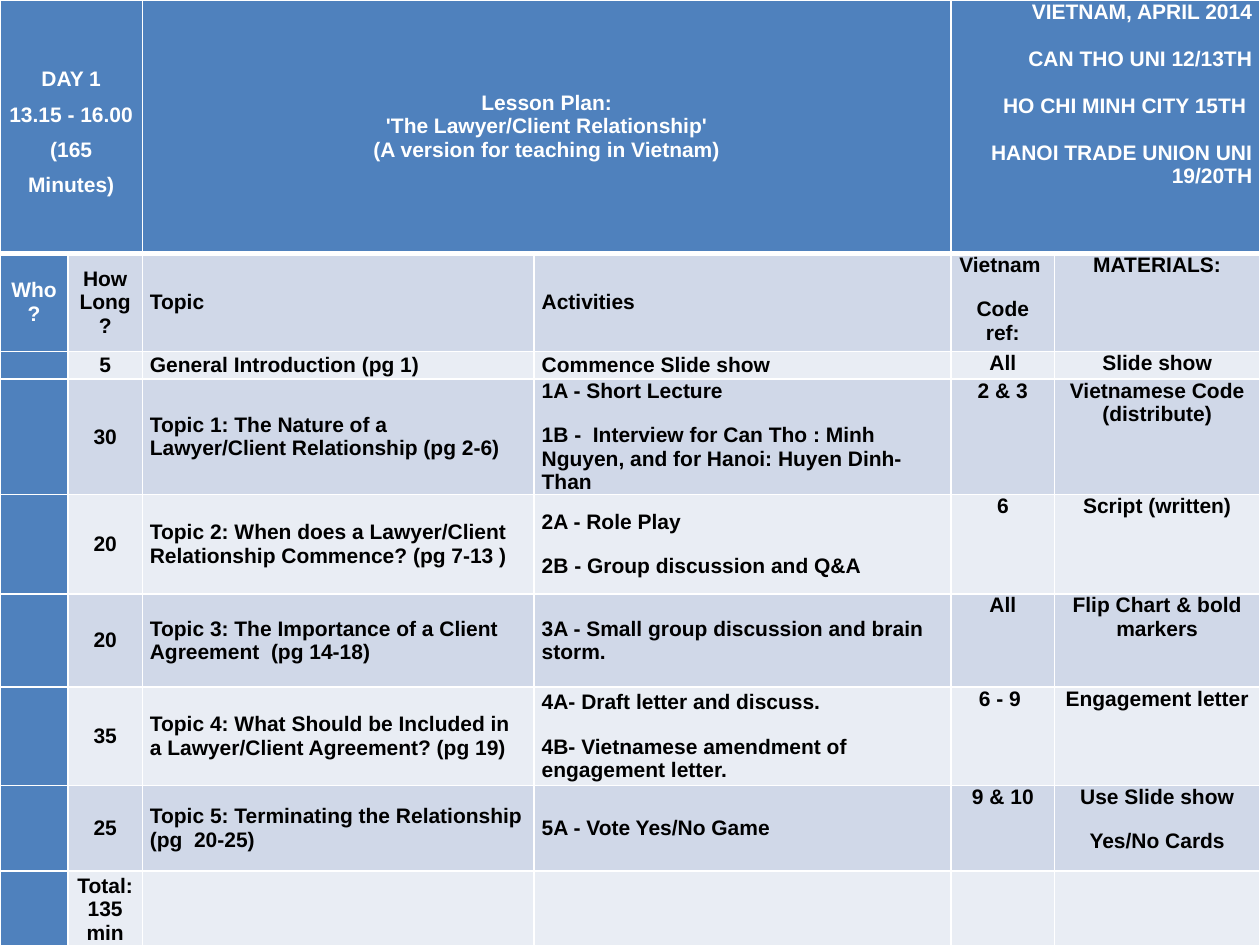
import pptx
import pptx.util
import pptx.dml.color
import pptx.enum.text
import lxml.etree

Inches = pptx.util.Inches
Pt = pptx.util.Pt
ALIGN = pptx.enum.text.PP_ALIGN
ANCHOR = pptx.enum.text.MSO_ANCHOR
COLORS = {"blue": "4F81BD", "dark_band": "D0D8E8", "light_band": "E9EDF4",
          "white": "FFFFFF", "black": "000000"}
NS = "http://schemas.openxmlformats.org/drawingml/2006/main"

column_widths = [0.54, 0.59, 3.11, 3.31, 0.82, 1.63]
row_heights = [2.01, 0.78, 0.22, 0.88, 0.79, 0.74, 0.78, 0.68, 0.61]

# One list of paragraphs per cell; the header cells each span two columns.
lesson_rows = [
    [["DAY 1", "13.15 - 16.00", "(165 Minutes)"], [],
     ["Lesson Plan:", "'The Lawyer/Client Relationship'",
      "(A version for teaching in Vietnam)"], [],
     ["VIETNAM, APRIL 2014", "CAN THO UNI 12/13TH", "HO CHI MINH CITY 15TH ",
      "HANOI TRADE UNION UNI 19/20TH"], []],
    [["Who?"], ["How Long?"], ["Topic"], ["Activities"],
     ["Vietnam ", "Code ref:"], ["MATERIALS:"]],
    [[], ["5"], ["General Introduction (pg 1)"], ["Commence Slide show"],
     ["All"], ["Slide show"]],
    [[], ["30"], ["Topic 1: The Nature of a Lawyer/Client Relationship (pg 2-6)"],
     ["1A - Short Lecture",
      "1B -  Interview for Can Tho : Minh Nguyen, and for Hanoi: Huyen Dinh-Than"],
     ["2 & 3"], ["Vietnamese Code (distribute)"]],
    [[], ["20"],
     ["Topic 2: When does a Lawyer/Client Relationship Commence? (pg 7-13 )"],
     ["2A - Role Play", "2B - Group discussion and Q&A"],
     ["6"], ["Script (written)"]],
    [[], ["20"], ["Topic 3: The Importance of a Client Agreement  (pg 14-18)"],
     ["3A - Small group discussion and brain storm."],
     ["All"], ["Flip Chart & bold markers"]],
    [[], ["35"],
     ["Topic 4: What Should be Included in a Lawyer/Client Agreement? (pg 19)"],
     ["4A- Draft letter and discuss.",
      "4B- Vietnamese amendment of engagement letter."],
     ["6 - 9 "], ["Engagement letter"]],
    [[], ["25"], ["Topic 5: Terminating the Relationship (pg  20-25)"],
     ["5A - Vote Yes/No Game"], ["9 & 10"], ["Use Slide show", "Yes/No Cards"]],
    [[], ["Total: 135 min"], [], [], [], []],
]


def set_borders(cell, row):
    """Draw white cell borders, heavier between the header and the body."""
    heavy_side = {0: "lnB", 1: "lnT"}.get(row)
    properties = cell._tc.get_or_add_tcPr()
    for side in ("lnL", "lnR", "lnT", "lnB"):
        width = Pt(3 if side == heavy_side else 1)
        line = lxml.etree.SubElement(properties, f"{{{NS}}}{side}", w=str(width))
        fill = lxml.etree.SubElement(line, f"{{{NS}}}solidFill")
        lxml.etree.SubElement(fill, f"{{{NS}}}srgbClr", val=COLORS["white"])


presentation = pptx.Presentation()
presentation.slide_width = Inches(10)
presentation.slide_height = Inches(7.5)
slide = presentation.slides.add_slide(presentation.slide_layouts[6])

lesson_plan = slide.shapes.add_table(
    len(row_heights), len(column_widths), Inches(0), Inches(0),
    Inches(sum(column_widths)), Inches(sum(row_heights))).table
for column, width in zip(lesson_plan.columns, column_widths):
    column.width = Inches(width)
for table_row, height in zip(lesson_plan.rows, row_heights):
    table_row.height = Inches(height)
for first in (0, 2, 4):
    lesson_plan.cell(0, first).merge(lesson_plan.cell(0, first + 1))

for row, entries in enumerate(lesson_rows):
    for col, lines in enumerate(entries):
        cell = lesson_plan.cell(row, col)
        is_blue = row == 0 or col == 0
        band = "dark_band" if row % 2 else "light_band"
        set_borders(cell, row)
        cell.fill.solid()
        cell.fill.fore_color.rgb = pptx.dml.color.RGBColor.from_string(
            COLORS["blue" if is_blue else band])
        cell.margin_left = cell.margin_right = Inches(0.06)
        cell.margin_top = cell.margin_bottom = Inches(0)
        cell.vertical_anchor = ANCHOR.TOP if col >= 4 else ANCHOR.MIDDLE

        if not lines:
            # Keeps an empty cell from stretching its row.
            lxml.etree.SubElement(cell.text_frame.paragraphs[0]._p,
                                  f"{{{NS}}}endParaRPr", sz="1200")
        for number, line in enumerate(lines):
            frame = cell.text_frame
            paragraph = frame.paragraphs[0] if number == 0 else frame.add_paragraph()
            if row == 0:
                paragraph.alignment = ALIGN.RIGHT if col == 4 else ALIGN.CENTER
                if col == 0:
                    paragraph.line_spacing = 1.5
                elif col == 4:
                    paragraph.space_after = Pt(13.5)
            else:
                paragraph.alignment = ALIGN.LEFT if col in (2, 3) else ALIGN.CENTER
                paragraph.space_before = paragraph.space_after = Pt(6)
            run = paragraph.add_run()
            run.text = line
            run.font.name = "Arial"
            run.font.size = Pt(12)
            run.font.bold = True
            run.font.color.rgb = pptx.dml.color.RGBColor.from_string(
                COLORS["white" if is_blue else "black"])

presentation.save("out.pptx")
